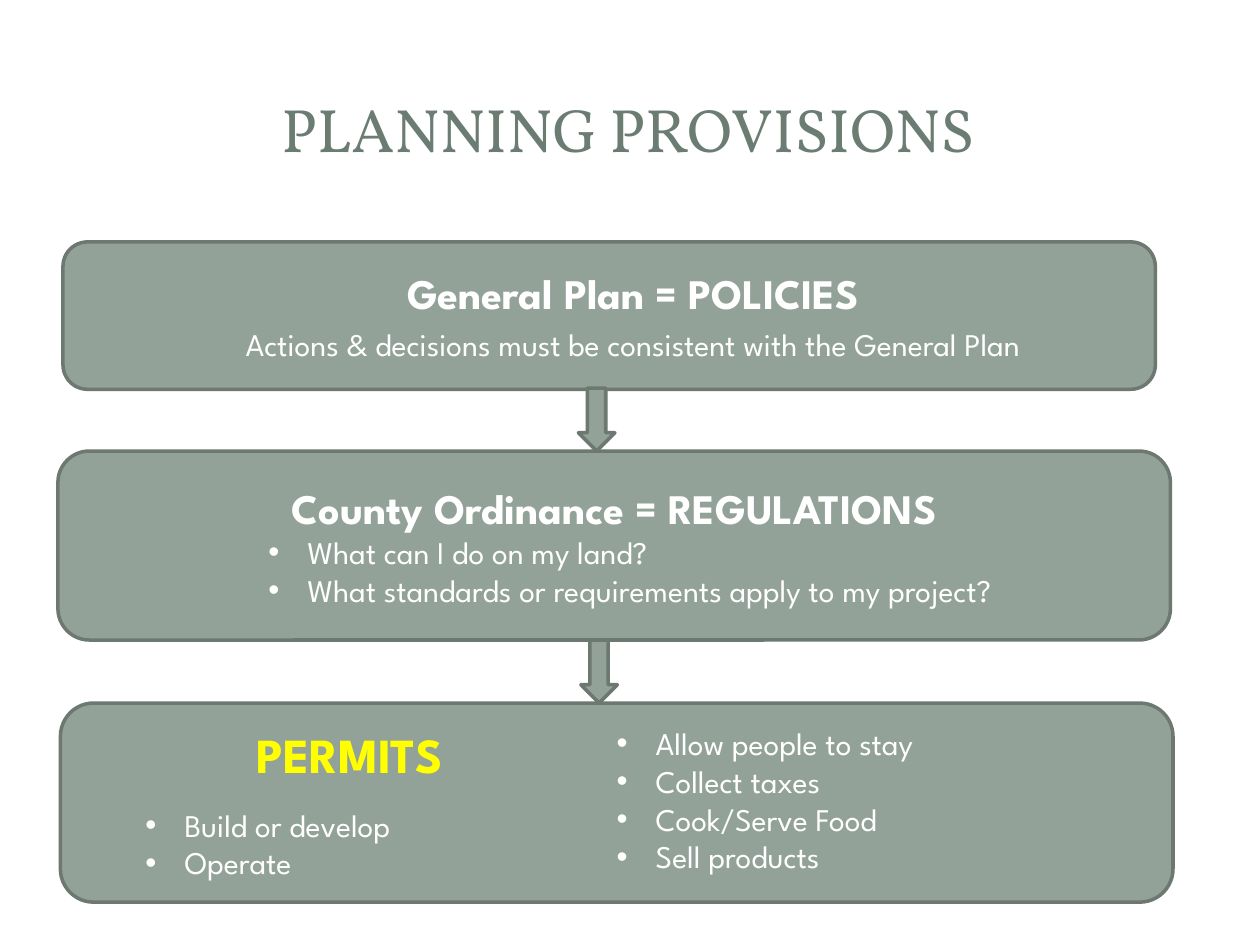
from dataclasses import dataclass

from lxml.etree import SubElement
from pptx import Presentation
from pptx.dml.color import RGBColor as Color
from pptx.enum.shapes import MSO_SHAPE as Shape
from pptx.enum.text import MSO_ANCHOR as Anchor, PP_ALIGN as Align
from pptx.oxml.ns import qn
from pptx.util import Inches, Pt


@dataclass(frozen=True)
class Theme:
    title_color: Color = Color.from_string("6B7D72")
    fill: Color = Color.from_string("93A299")
    line: Color = Color.from_string("6D7871")
    text: Color = Color.from_string("FFFFFF")
    accent: Color = Color.from_string("FFFF00")
    title_font: str = "Vollkorn"
    body_font: str = "League Spartan"
    title_size: int = 35
    accent_size: int = 28
    heading_size: int = 24
    body_size: int = 18
    line_width: int = 2


class SlideBuilder:
    """Draws the planning flow on one slide in a shared style."""

    def __init__(self, slide, theme):
        self.slide = slide
        self.theme = theme

    def style_runs(self, paragraph, size, color, font, bold=False):
        for run in paragraph.runs:
            run.font.size = Pt(size)
            run.font.color.rgb = color
            run.font.name = font
            run.font.bold = bold

    def title(self, text, left, top, width, height):
        box = self.slide.shapes.add_textbox(*map(Inches, (left, top, width, height)))
        frame = box.text_frame
        frame.word_wrap = True
        frame.vertical_anchor = Anchor.MIDDLE
        frame.text = text
        paragraph = frame.paragraphs[0]
        paragraph.alignment = Align.CENTER
        theme = self.theme
        self.style_runs(paragraph, theme.title_size, theme.title_color, theme.title_font)

    def block(self, preset, left, top, width, height):
        shape = self.slide.shapes.add_shape(preset, *map(Inches, (left, top, width, height)))
        shape.shadow.inherit = False
        shape.fill.solid()
        shape.fill.fore_color.rgb = self.theme.fill
        shape.line.color.rgb = self.theme.line
        shape.line.width = Pt(self.theme.line_width)
        return shape

    def panel(self, left, top, width, height, columns=1):
        frame = self.block(Shape.ROUNDED_RECTANGLE, left, top, width, height).text_frame
        frame.word_wrap = True
        frame.vertical_anchor = Anchor.MIDDLE
        if columns > 1:
            frame._txBody.bodyPr.set("numCol", str(columns))
        return frame

    def arrow(self, left, top):
        self.block(Shape.DOWN_ARROW, left, top, 0.29, 0.5)

    def heading(self, frame, text, size=None, color=None):
        paragraph = frame.paragraphs[0]
        paragraph.text = text
        paragraph.alignment = Align.CENTER
        theme = self.theme
        self.style_runs(paragraph, size or theme.heading_size, color or theme.text, theme.body_font, True)
        return paragraph

    def body(self, frame, text, alignment=Align.LEFT):
        paragraph = frame.add_paragraph()
        paragraph.text = text
        paragraph.alignment = alignment
        self.style_runs(paragraph, self.theme.body_size, self.theme.text, self.theme.body_font)
        return paragraph

    def indent(self, paragraph, margin, hanging=0):
        properties = paragraph._p.get_or_add_pPr()
        properties.set("marL", str(Inches(margin)))
        properties.set("indent", str(-Inches(hanging)))
        return properties

    def bullets(self, frame, items, margin, space_before=0):
        for index, text in enumerate(items):
            paragraph = self.body(frame, text)
            paragraph.space_before = Pt(0 if index else space_before)
            properties = self.indent(paragraph, margin, 0.31)
            SubElement(properties, qn("a:buFont"), typeface="Arial")
            SubElement(properties, qn("a:buChar"), char="•")


def main():
    presentation = Presentation()
    presentation.slide_width = Inches(10)
    presentation.slide_height = Inches(7.5)
    theme = Theme()
    builder = SlideBuilder(presentation.slides.add_slide(presentation.slide_layouts[6]), theme)

    builder.title("PLANNING PROVISIONS", 0.47, 0.45, 9.03, 1.14)

    policies = builder.panel(0.5, 1.92, 8.67, 1.17)
    heading = builder.heading(policies, "General Plan = POLICIES")
    detail = builder.body(
        policies, "Actions & decisions must be consistent with the General Plan", Align.CENTER
    )
    for paragraph in (heading, detail):
        builder.indent(paragraph, 0.38)
        paragraph.space_before = Pt(4)

    regulations = builder.panel(0.46, 3.58, 8.83, 1.5)
    builder.heading(regulations, "County Ordinance = REGULATIONS")
    questions = ["What can I do on my land?", "What standards or requirements apply to my project?"]
    builder.bullets(regulations, questions, 1.81)
    builder.arrow(4.59, 3.08)

    permits = builder.panel(0.48, 5.58, 8.83, 1.58, columns=2)
    builder.heading(permits, "PERMITS", theme.accent_size, theme.accent)
    builder.bullets(permits, ["Build or develop", "Operate"], 0.81, space_before=13)
    activities = ["Allow people to stay", "Collect taxes", "Cook/Serve Food", "Sell products"]
    builder.bullets(permits, activities, 0.31)
    builder.arrow(4.61, 5.08)

    presentation.save("out.pptx")


if __name__ == "__main__":
    main()
